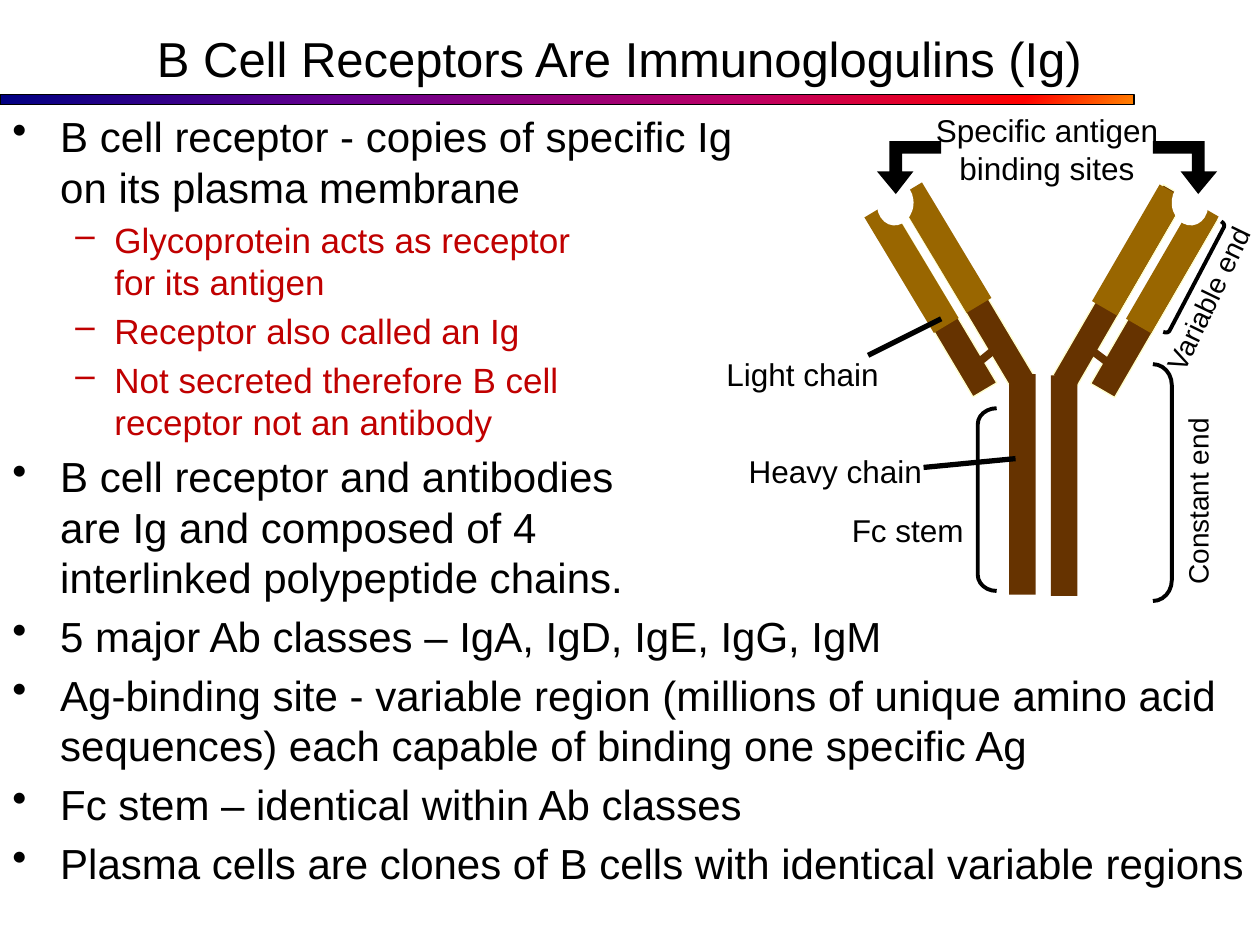
from lxml import etree
from pptx import Presentation
from pptx.dml.color import RGBColor
from pptx.enum.shapes import MSO_CONNECTOR, MSO_SHAPE
from pptx.enum.text import MSO_ANCHOR, PP_ALIGN
from pptx.oxml import parse_xml
from pptx.oxml.ns import qn
from pptx.util import Inches, Pt

RECT = MSO_SHAPE.RECTANGLE
OVAL = MSO_SHAPE.OVAL
LEFT = MSO_SHAPE.LEFT_BRACKET
RIGHT = MSO_SHAPE.RIGHT_BRACKET
STRAIGHT = MSO_CONNECTOR.STRAIGHT
CENTER = PP_ALIGN.CENTER
MIDDLE = MSO_ANCHOR.MIDDLE

HUES = {"black": "000000", "white": "FFFFFF", "red": "C00000",
        "heavy": "663300", "tan": "996600", "cream": "FFFFCC"}
RAMP = {0: "000082", 30: "66008F", 65: "BA0066", 90: "FF0000", 100: "FF8200"}
COLOR = {name: RGBColor.from_string(hue) for name, hue in HUES.items()}

prs = Presentation()
prs.slide_width, prs.slide_height = Inches(10), Inches(7.5)
slide = prs.slides.add_slide(prs.slide_layouts[6])
shapes = slide.shapes


def style(shape, fill=None, line=None, width=0.75, turn=0):
    shape.shadow.inherit = False
    shape.rotation = turn
    if fill:
        shape.fill.solid()
        shape.fill.fore_color.rgb = COLOR[fill]
    else:
        shape.fill.background()
    if line:
        shape.line.color.rgb = COLOR[line]
        shape.line.width = Pt(width)
    else:
        shape.line.fill.background()
    return shape


def write(box, text, size, hue="black", turn=0):
    area = shapes.add_textbox(*map(Inches, box))
    area.rotation = turn
    frame = area.text_frame
    frame.word_wrap = True
    for i, part in enumerate(text if isinstance(text, list) else [text]):
        para = frame.paragraphs[0] if i == 0 else frame.add_paragraph()
        para.text = part
        para.alignment = CENTER
        para.font.size = Pt(size)
        para.font.name = "Arial"
        para.font.color.rgb = COLOR[hue]
    return frame


# Title
title = write((0.33, 0, 9.17, 0.92), "B Cell Receptors Are Immunoglogulins (Ig)", 28)
title.vertical_anchor = MIDDLE

# Bulleted body
points = [
    (0, "B cell receptor - copies of specific Ig \non its plasma membrane"),
    (1, "Glycoprotein acts as receptor \nfor its antigen"),
    (1, "Receptor also called an Ig"),
    (1, "Not secreted therefore B cell \nreceptor not an antibody"),
    (0, "B cell receptor and antibodies \nare Ig and composed of 4 \ninterlinked polypeptide chains."),
    (0, "5 major Ab classes – IgA, IgD, IgE, IgG, IgM"),
    (0, "Ag-binding site - variable region (millions of unique amino acid "
        "sequences) each capable of binding one specific Ag"),
    (0, "Fc stem – identical within Ab classes"),
    (0, "Plasma cells are clones of B cells with identical variable regions"),
]
levels = [(24, "black", "•", 0.38, 0.38), (20, "red", "–", 0.81, 0.31)]
body = write((0, 0.83, 10, 6.03), [text for _, text in points], 24)
for (level, _), para in zip(points, body.paragraphs):
    size, hue, mark, margin, hang = levels[level]
    para.level = level
    para.alignment = PP_ALIGN.LEFT
    para.font.size = Pt(size)
    para.font.color.rgb = COLOR[hue]
    para.space_before = Pt(size * 0.2)
    props = para._p.get_or_add_pPr()
    props.set("marL", str(Inches(margin)))
    props.set("indent", str(-Inches(hang)))
    bullet = etree.Element(qn("a:buChar"), char=mark)
    props.find(qn("a:defRPr")).addprevious(bullet)

# Rainbow rule under the title
rule = style(shapes.add_shape(RECT, 0, Inches(0.75), Inches(9), Inches(0.08)),
             "black", "black")
stops = "".join(f'<a:gs pos="{pos * 1000}"><a:srgbClr val="{hue}"/></a:gs>'
                for pos, hue in RAMP.items())
ramp = parse_xml(
    '<a:gradFill xmlns:a="http://schemas.openxmlformats.org/drawingml/2006/main">'
    f'<a:gsLst>{stops}</a:gsLst><a:lin ang="2700000" scaled="0"/></a:gradFill>')
solid = rule._element.spPr.find(qn("a:solidFill"))
solid.getparent().replace(solid, ramp)

# Chains: lower arms, stem, then variable ends
bars = [
    ((7.29, 1.58, 0.22, 1.63), 329.2, "heavy", "cream"),
    ((7.56, 1.4, 0.21, 1.75), 329.2, "heavy", "cream"),
    ((9.05, 1.58, 0.22, 1.63), 30.1, "heavy", "cream"),
    ((8.78, 1.4, 0.21, 1.75), 30.1, "heavy", "cream"),
    ((8.01, 2.97, 0.21, 1.75), 0, "heavy", None),
    ((8.34, 2.98, 0.21, 1.75), 0, "heavy", None),
    ((9.19, 1.59, 0.23, 1.07), 30.1, "tan", None),
    ((8.92, 1.45, 0.23, 1.07), 30.1, "tan", None),
    ((7.38, 1.43, 0.23, 1.07), 329, "tan", None),
    ((7.12, 1.59, 0.23, 1.07), 329, "tan", None),
]
for box, turn, fill, line in bars:
    style(shapes.add_shape(RECT, *map(Inches, box)), fill, line, turn=turn)

# Bonds between chains and label pointers
lines = [
    ((7.91, 2.76, 7.75, 2.89), "heavy", 4.5),
    ((8.65, 2.77, 8.81, 2.89), "heavy", 4.5),
    ((7.33, 3.71, 8.06, 3.64), "black", 3),
    ((6.89, 2.82, 7.47, 2.53), "black", 3),
]
for ends, hue, width in lines:
    link = shapes.add_connector(STRAIGHT, *map(Inches, ends))
    link.line.color.rgb = COLOR[hue]
    link.line.width = Pt(width)
    etree.SubElement(link._element.spPr, qn("a:effectLst"))

# Brackets
braces = [
    (LEFT, (7.76, 3.24, 0.15, 1.45), 0, 0.85),
    (RIGHT, (9.15, 2.89, 0.15, 1.88), 0, 1.1),
    (RIGHT, (9.46, 1.71, 0.04, 0.99), 27.7, 0.75),
]
for kind, box, turn, curve in braces:
    brace = style(shapes.add_shape(kind, *map(Inches, box)),
                  line="black", width=2.25, turn=turn)
    brace.adjustments[0] = curve

# Labels
labels = [
    ((5.08, 2.77, 2.58, 0.4), "Light chain", 18, 0),
    ((5.5, 3.54, 2.26, 0.34), "Heavy chain", 18, 0),
    ((6.51, 4.01, 1.46, 0.4), "Fc stem ", 18, 0),
    ((8.38, 3.82, 2.2, 0.32), "Constant end", 16, 270),
    ((8.82, 2.2, 1.49, 0.32), "Variable end", 16, 295.8),
    ((7.18, 0.83, 2.26, 0.6), "Specific antigen\nbinding sites", 18, 0),
]
for box, text, size, turn in labels:
    write(box, text, size, turn=turn)

# Binding sites: round notches and mirrored bent arrows
bend = [(0.15, 1.54), (0.29, 1.36), (0.2, 1.36), (0.2, 1.22), (0.51, 1.22),
        (0.51, 1.12), (0.1, 1.12), (0.1, 1.36), (0, 1.36)]
for notch, turn, edge, side in [(6.96, 5.9, 6.96, 1), (9.3, 353.4, 9.66, -1)]:
    style(shapes.add_shape(OVAL, *map(Inches, (notch, 1.44, 0.29, 0.35))),
          "white", turn=turn)
    dots = [(Inches(edge + side * x), Inches(y)) for x, y in bend]
    pen = shapes.build_freeform(*dots[0])
    pen.add_line_segments(dots[1:], close=True)
    style(pen.convert_to_shape(), "black")

prs.save("out.pptx")
